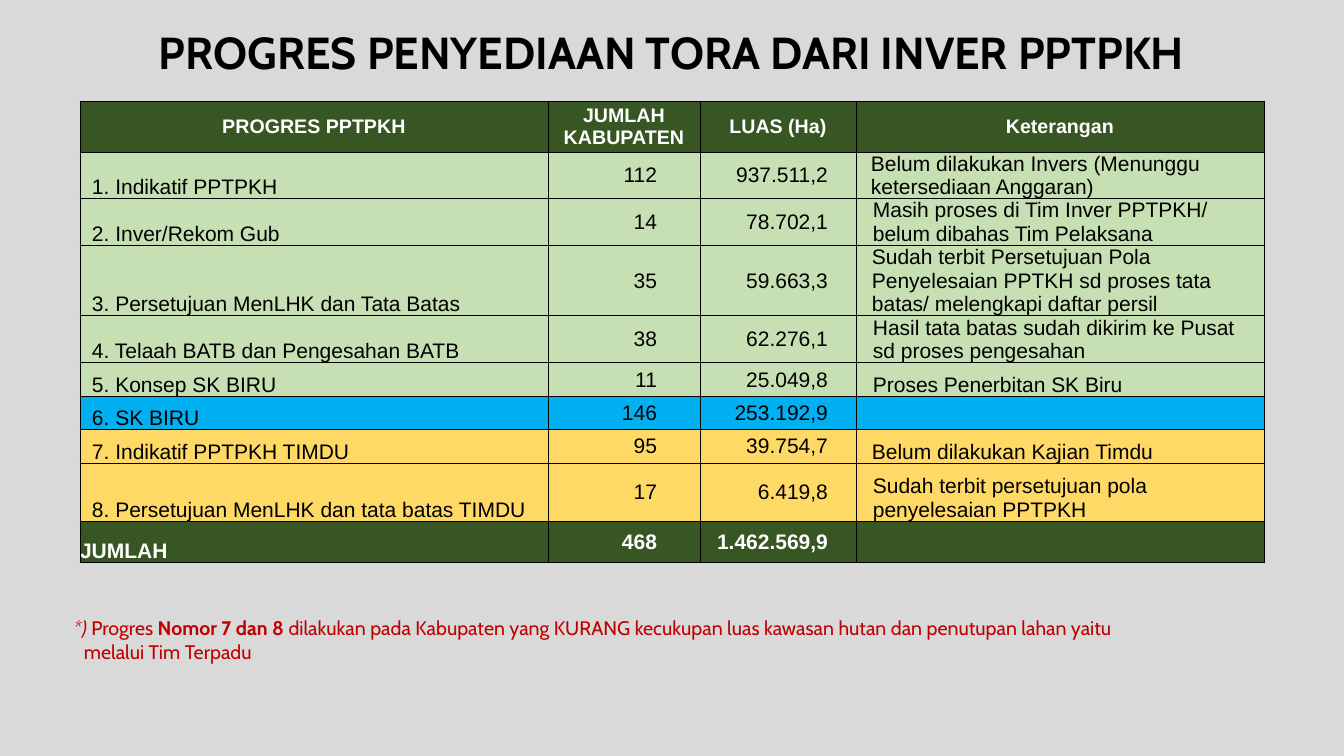
from lxml import etree
from pptx import Presentation
from pptx import util as u
from pptx.dml import color
from pptx.enum import text
from pptx.oxml import ns

COLORS = {"page": "D9D9D9", "black": "000000", "white": "FFFFFF", "red": "C00000",
          "forest": "375623", "green": "C6E0B4", "blue": "00B0F0", "yellow": "FFD966"}
COLUMN_WIDTHS = [468, 152, 156, 408]
HEADINGS = ["PROGRES PPTPKH", "JUMLAH KABUPATEN", "LUAS (Ha)", "Keterangan"]
# Row height, fill, indent of the remark, cell texts
ROWS = [
    (46, "green", 15, ["1. Indikatif PPTPKH", "112", "937.511,2",
                       "Belum dilakukan Invers (Menunggu ketersediaan Anggaran)"]),
    (47, "green", 17, ["2. Inver/Rekom Gub", "14", "78.702,1",
                       "Masih proses di Tim Inver PPTPKH/ belum dibahas Tim Pelaksana"]),
    (70, "green", 16, ["3. Persetujuan MenLHK dan Tata Batas", "35", "59.663,3",
                       "Sudah terbit Persetujuan Pola Penyelesaian PPTKH sd proses tata "
                       "batas/ melengkapi daftar persil"]),
    (47, "green", 17, ["4. Telaah BATB dan Pengesahan BATB", "38", "62.276,1",
                       "Hasil tata batas sudah dikirim ke Pusat sd proses pengesahan"]),
    (34, "green", 17, ["5. Konsep SK BIRU", "11", "25.049,8", "Proses Penerbitan SK Biru"]),
    (33, "blue", 0, ["6. SK BIRU", "146", "253.192,9", ""]),
    (34, "yellow", 16, ["7. Indikatif PPTPKH TIMDU", "95", "39.754,7",
                        "Belum dilakukan Kajian Timdu"]),
    (58, "yellow", 17, ["8. Persetujuan MenLHK dan tata batas TIMDU", "17", "6.419,8",
                        "Sudah terbit persetujuan pola penyelesaian PPTPKH"]),
    (41, "forest", 0, ["JUMLAH", "468", "1.462.569,9", ""]),
]


def px(length):
    return u.Emu(round(length * 914400 / 100.8))


def rgb(name):
    return color.RGBColor.from_string(COLORS[name])


class SlideBuilder:
    def __init__(self, presentation):
        self.slide = presentation.slides.add_slide(presentation.slide_layouts[5])
        fill = self.slide.background.fill
        fill.solid()
        fill.fore_color.rgb = rgb("page")

    def format_font(self, font, color_name, size, **values):
        font.color.rgb = rgb(color_name)
        for name, value in {"size": u.Pt(size), "name": "Arial", **values}.items():
            setattr(font, name, value)

    def title(self, box, wording):
        shape = self.slide.shapes.title
        shape.left, shape.top, shape.width, shape.height = map(px, box)
        frame = shape.text_frame
        frame.text = wording
        frame.auto_size = text.MSO_AUTO_SIZE.NONE
        frame.vertical_anchor = text.MSO_ANCHOR.MIDDLE
        paragraph = frame.paragraphs[0]
        paragraph.alignment = text.PP_ALIGN.CENTER
        paragraph.line_spacing = 0.8
        self.format_font(paragraph.runs[0].font, "black", 32, name="Cabin", bold=True)

    def table(self, left, top, widths, heights):
        shape = self.slide.shapes.add_table(len(heights), len(widths), px(left), px(top),
                                            px(sum(widths)), px(sum(heights)))
        table = shape.table
        table.first_row = table.horz_banding = False
        for column, width in zip(table.columns, widths):
            column.width = px(width)
        for row, height in zip(table.rows, heights):
            row.height = px(height)
        return table

    def borders(self, cell):
        """Draw thin black lines on all four sides, ahead of the cell's fill."""
        properties = cell._tc.get_or_add_tcPr()
        for position, side in enumerate(["lnL", "lnR", "lnT", "lnB"]):
            line = etree.Element(ns.qn(f"a:{side}"), w=str(u.Pt(0.5)))
            fill = etree.SubElement(line, ns.qn("a:solidFill"))
            etree.SubElement(fill, ns.qn("a:srgbClr"), val=COLORS["black"])
            properties.insert(position, line)

    def cell(self, cell, wording, fill, font, alignment, anchor, left=0, right=0, indent=0):
        margins = {"margin_left": px(left), "margin_right": px(right),
                   "margin_top": 0, "margin_bottom": 0, "vertical_anchor": anchor}
        for name, value in margins.items():
            setattr(cell, name, value)
        cell.fill.solid()
        cell.fill.fore_color.rgb = rgb(fill)
        self.borders(cell)
        cell.text = wording
        paragraph = cell.text_frame.paragraphs[0]
        paragraph.alignment = alignment
        if indent:
            paragraph._p.get_or_add_pPr().set("marL", str(px(indent)))
        self.format_font(paragraph.font, **font)
        for run in paragraph.runs:
            self.format_font(run.font, **font)

    def footnote(self, box, runs):
        frame = self.slide.shapes.add_textbox(*map(px, box)).text_frame
        frame.word_wrap = True
        frame.auto_size = text.MSO_AUTO_SIZE.SHAPE_TO_FIT_TEXT
        paragraph = frame.paragraphs[0]
        properties = paragraph._p.get_or_add_pPr()
        properties.set("marL", str(px(10)))
        properties.set("indent", str(px(-10)))
        for wording, values in runs:
            run = paragraph.add_run()
            run.text = wording
            self.format_font(run.font, "red", 14, name="Cabin", **values)


def main():
    presentation = Presentation()
    presentation.slide_width, presentation.slide_height = px(1344), px(756)
    builder = SlideBuilder(presentation)
    builder.title((80, 30, 1184, 54), "PROGRES PENYEDIAAN TORA DARI INVER PPTPKH")

    align, anchor = text.PP_ALIGN, text.MSO_ANCHOR
    table = builder.table(80, 101, COLUMN_WIDTHS, [51] + [row[0] for row in ROWS])
    heading_font = {"color_name": "white", "size": 14, "bold": True}
    for column, heading in enumerate(HEADINGS):
        builder.cell(table.cell(0, column), heading, "forest", heading_font,
                     align.CENTER, anchor.MIDDLE)
    for number, (_, fill, indent, wordings) in enumerate(ROWS, 1):
        total = fill == "forest"
        font = {"color_name": "white" if total else "black", "size": 15, "bold": total}
        layouts = [
            (align.LEFT, anchor.BOTTOM, 0 if total else 12, 0, 0),
            (align.RIGHT, anchor.MIDDLE, 0, 43, 0),
            (align.RIGHT, anchor.MIDDLE, 0, 28, 0),
            (align.LEFT, anchor.BOTTOM, 0, 4, indent),
        ]
        for column, (wording, layout) in enumerate(zip(wordings, layouts)):
            builder.cell(table.cell(number, column), wording, fill, font, *layout)

    builder.footnote((64, 611, 1113, 57), [
        ("*) ", {"italic": True}),
        ("Progres ", {}),
        ("Nomor 7 dan 8 ", {"bold": True}),
        ("dilakukan pada Kabupaten yang KURANG kecukupan luas kawasan hutan dan "
         "penutupan lahan yaitu melalui Tim Terpadu", {}),
    ])
    presentation.save("out.pptx")


if __name__ == "__main__":
    main()
